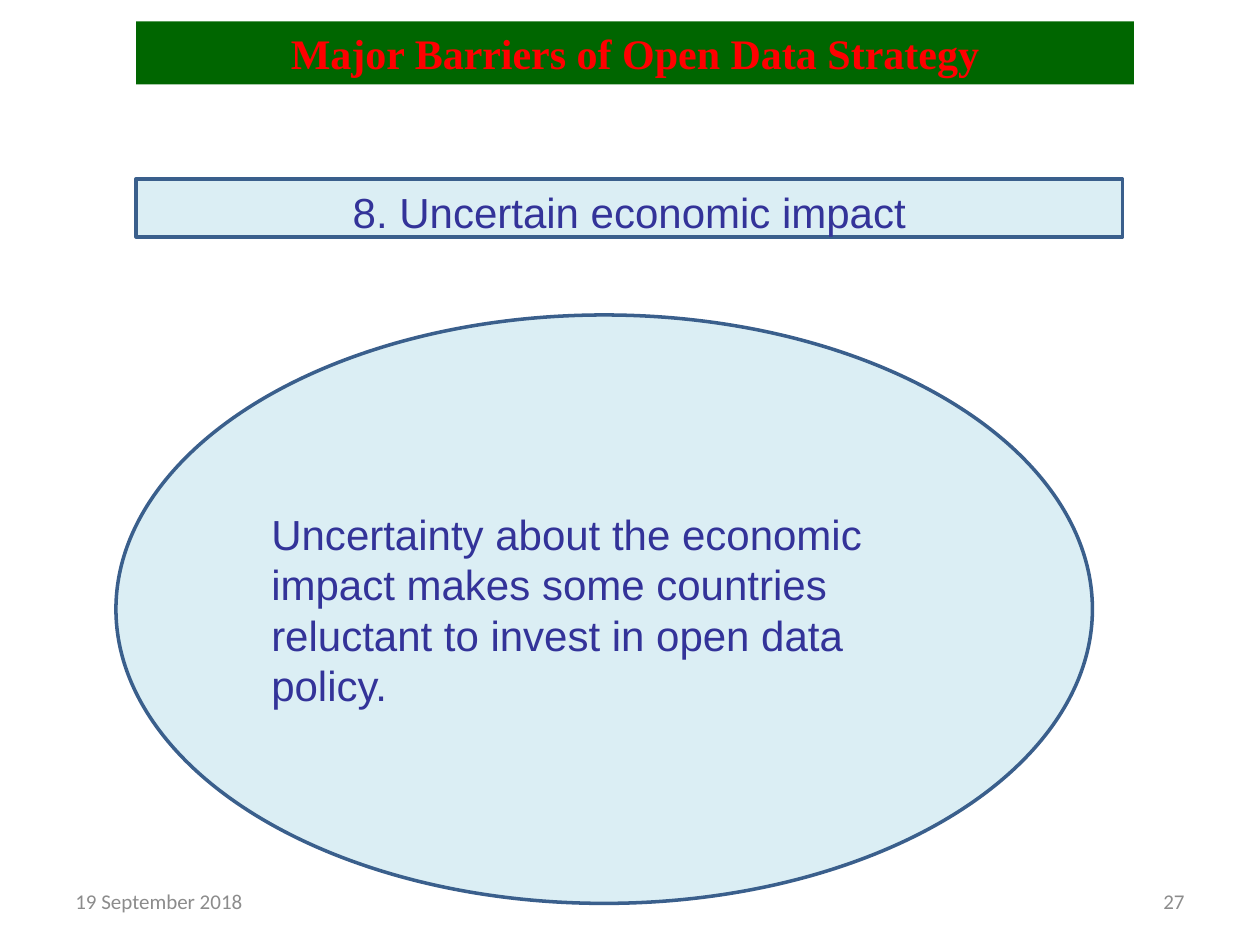
from pptx import Presentation
from pptx.dml.color import RGBColor
from pptx.enum.shapes import MSO_SHAPE as Shape
from pptx.enum.text import MSO_ANCHOR as Anchor, PP_ALIGN as Align
from pptx.util import Inches, Pt

COLORS = {
    "banner": "006600",
    "title": "FF0000",
    "panel": "DBEEF4",
    "outline": "3A5F8C",
    "body": "333399",
    "footer": "8C8C8C",
}


def color(name):
    return RGBColor.from_string(COLORS[name])


def write(shape, text, size, font, ink, align=Align.LEFT, bold=False):
    """Put one styled, vertically centred paragraph in the shape."""
    frame = shape.text_frame
    frame.word_wrap = True
    frame.vertical_anchor = Anchor.MIDDLE
    frame.text = text
    para = frame.paragraphs[0]
    para.alignment = align
    span = para.runs[0]
    span.font.size = Pt(size)
    span.font.name = font
    span.font.bold = bold
    span.font.color.rgb = color(ink)
    return para


def add_filled(page, kind, bounds, fill, outline=None):
    shape = page.shapes.add_shape(kind, *map(Inches, bounds))
    shape.shadow.inherit = False
    shape.fill.solid()
    shape.fill.fore_color.rgb = color(fill)
    if outline:
        shape.line.color.rgb = color(outline)
        shape.line.width = Pt(2)
    else:
        shape.line.fill.background()
    return shape


def add_footer(page, left, text, align):
    box = page.shapes.add_textbox(Inches(left), Inches(6.95), Inches(2.33), Inches(0.4))
    write(box, text, 12, "Calibri", "footer", align)


def main():
    deck = Presentation()
    deck.slide_width, deck.slide_height = Inches(10), Inches(7.5)
    page = deck.slides.add_slide(deck.slide_layouts[6])

    banner = add_filled(page, Shape.RECTANGLE, (1.08, 0.17, 7.92, 0.5), "banner")
    write(banner, "Major Barriers of Open Data Strategy", 24, "Times New Roman",
          "title", Align.CENTER, bold=True)

    add_footer(page, 0.5, "19 September 2018", Align.LEFT)
    add_footer(page, 7.17, "27", Align.RIGHT)

    explanation = add_filled(page, Shape.OVAL, (0.92, 2.5, 7.75, 4.67), "panel", "outline")
    write(explanation,
          "Uncertainty about the economic impact makes some countries "
          "reluctant to invest in open data policy.", 24, "Arial", "body")

    barrier = add_filled(page, Shape.RECTANGLE, (1.08, 1.42, 7.83, 0.46), "panel", "outline")
    heading = write(barrier, "8. Uncertain economic impact", 24, "Arial", "body", Align.CENTER)
    heading.line_spacing = 1.15
    heading.space_after = Pt(10)

    deck.save("out.pptx")


if __name__ == "__main__":
    main()
